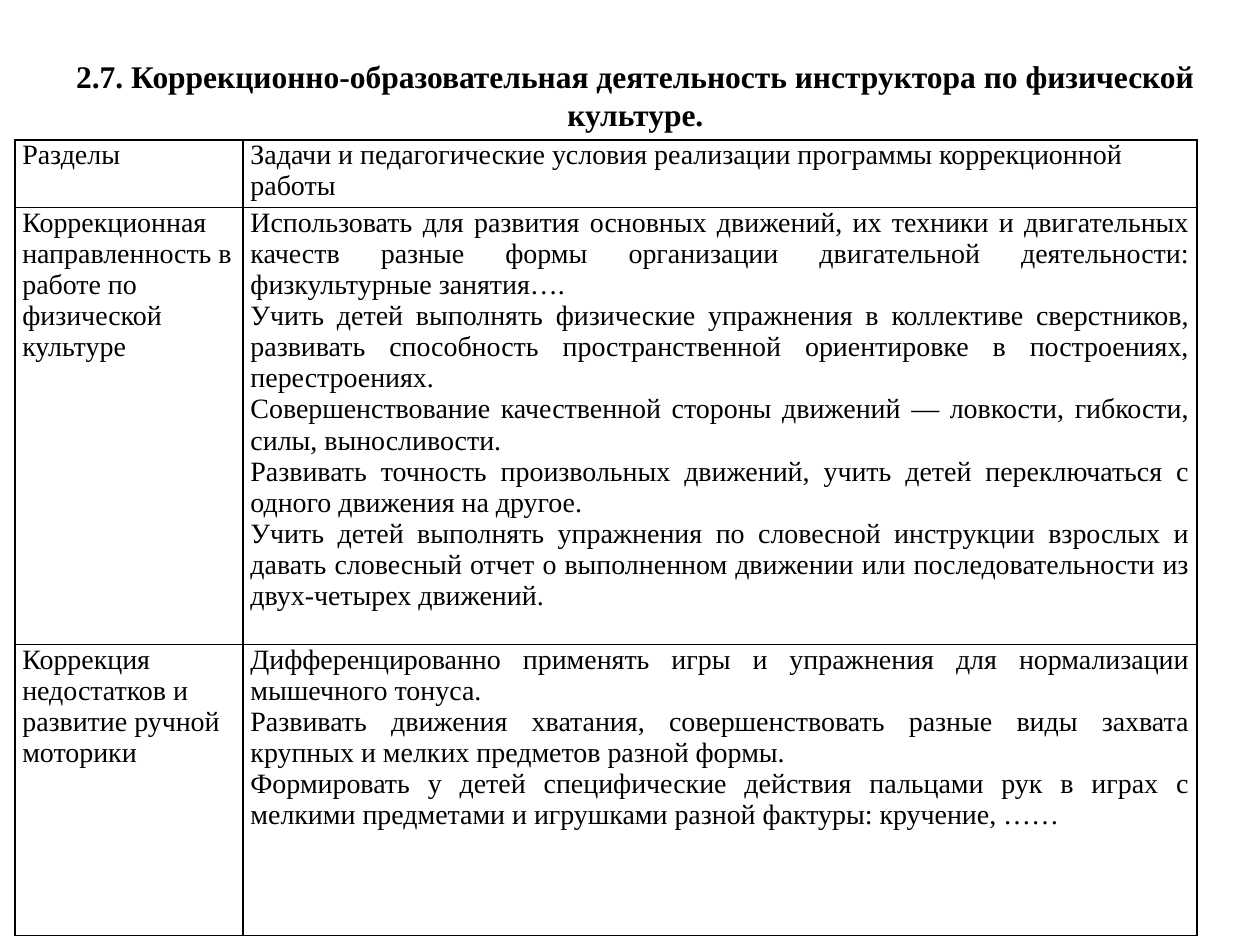
from lxml.etree import SubElement
from pptx import Presentation
from pptx.dml.color import RGBColor
from pptx.enum.text import MSO_ANCHOR, MSO_AUTO_SIZE, PP_ALIGN
from pptx.oxml.ns import qn
from pptx.util import Cm, Pt

BLACK = RGBColor(0, 0, 0)
TITLE = "2.7. Коррекционно-образовательная деятельность инструктора по физической культуре."
COLS = [4.6, 19.23]
ROWS = [1.36, 8.81, 5.87]
CELLS = [
    (["Разделы"],
     ["Задачи и педагогические условия реализации программы коррекционной работы"]),
    (["Коррекционная направленность в работе по физической культуре"],
     ["Использовать для развития основных движений, их техники и двигательных качеств разные формы организации двигательной деятельности: физкультурные занятия….",
      "Учить детей выполнять физические упражнения в коллективе сверстников, развивать способность пространственной ориентировке в построениях, перестроениях.",
      "Совершенствование качественной стороны движений — ловкости, гибкости, силы, выносливости.",
      "Развивать точность произвольных движений, учить детей переключаться с одного движения на другое.",
      "Учить детей выполнять упражнения по словесной инструкции взрослых и давать словесный отчет о выполненном движении или последовательности из двух-четырех движений."]),
    (["Коррекция недостатков и развитие ручной моторики"],
     ["Дифференцированно применять игры и упражнения для нормализации мышечного тонуса.",
      "Развивать движения хватания, совершенствовать разные виды захвата крупных и мелких предметов разной формы.",
      "Формировать у детей специфические действия пальцами рук в играх с мелкими предметами и игрушками разной фактуры: кручение, ……"]),
]


class Deck:
    face = "Times New Roman"
    color = BLACK
    line = Pt(1)

    def __init__(self):
        self.file = Presentation()
        self.file.slide_width = Cm(25.4)
        self.file.slide_height = Cm(19.05)
        self.slide = self.file.slides.add_slide(self.file.slide_layouts[5])

    def style(self, frame, size, align, bold=False):
        for para in frame.paragraphs:
            para.alignment = align
            for run in para.runs:
                run.font.name = self.face
                run.font.size = Pt(size)
                run.font.bold = bold
                run.font.color.rgb = self.color

    def title(self, text, left, top, width, height):
        shape = self.slide.shapes.title
        shape.left, shape.top = Cm(left), Cm(top)
        shape.width, shape.height = Cm(width), Cm(height)
        frame = shape.text_frame
        frame.text = text
        frame.word_wrap = True
        frame.auto_size = MSO_AUTO_SIZE.SHAPE_TO_FIT_TEXT
        frame.vertical_anchor = MSO_ANCHOR.TOP
        self.style(frame, 18, PP_ALIGN.CENTER, True)

    def border(self, cell):
        props = cell._tc.get_or_add_tcPr()
        for side in ("lnL", "lnR", "lnT", "lnB"):
            edge = SubElement(props, qn(f"a:{side}"), w=str(self.line))
            fill = SubElement(edge, qn("a:solidFill"))
            SubElement(fill, qn("a:srgbClr"), val=str(self.color))

    def cell(self, cell, lines, align):
        cell.margin_left = cell.margin_right = Cm(0.15)
        cell.margin_top = cell.margin_bottom = 0
        self.border(cell)
        cell.fill.background()
        cell.text_frame.text = "\n".join(lines)
        self.style(cell.text_frame, 16, align)

    def table(self, data, cols, rows, left, top):
        table = self.slide.shapes.add_table(
            len(rows), len(cols), Cm(left), Cm(top), Cm(sum(cols)), Cm(sum(rows))).table
        table.first_row = table.horz_banding = False
        for col, width in zip(table.columns, cols):
            col.width = Cm(width)
        for r, height in enumerate(rows):
            table.rows[r].height = Cm(height)
            for c, lines in enumerate(data[r]):
                body = r > 0 and c > 0
                align = PP_ALIGN.JUSTIFY if body else PP_ALIGN.LEFT
                self.cell(table.cell(r, c), lines, align)


def main():
    deck = Deck()
    deck.title(TITLE, 0.71, 1.02, 24.2, 1.8)
    deck.table(CELLS, COLS, ROWS, 0.3, 2.82)
    deck.file.save("out.pptx")


if __name__ == "__main__":
    main()
